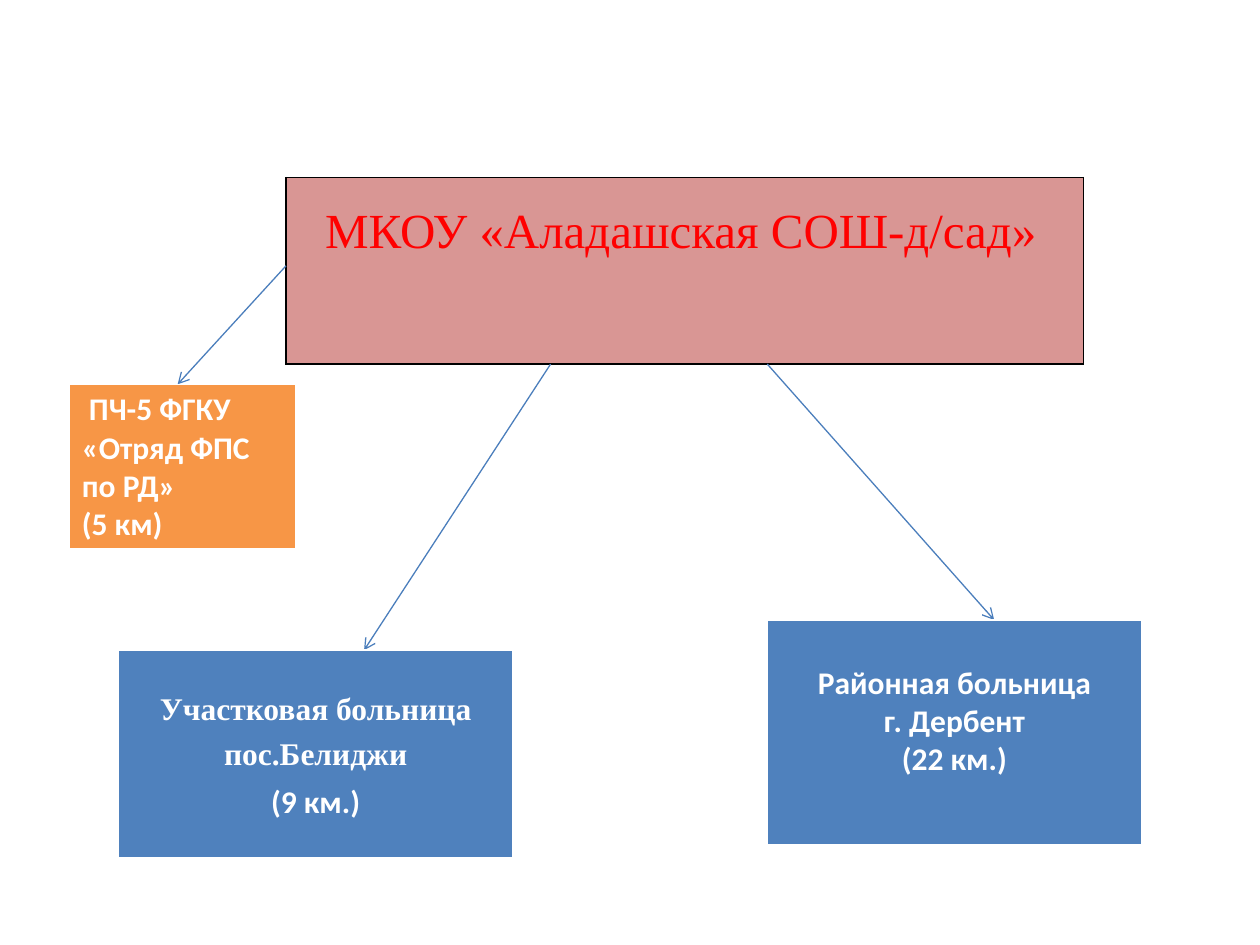
from dataclasses import dataclass

from lxml import etree
from pptx import Presentation
from pptx.dml.color import RGBColor
from pptx.enum.shapes import MSO_CONNECTOR
from pptx.enum.text import PP_ALIGN
from pptx.oxml.ns import qn
from pptx.util import Inches, Pt

STRAIGHT = MSO_CONNECTOR.STRAIGHT
LEFT, CENTER = PP_ALIGN.LEFT, PP_ALIGN.CENTER

BLACK = RGBColor(0x00, 0x00, 0x00)
WHITE = RGBColor(0xFF, 0xFF, 0xFF)
RED = RGBColor(0xFF, 0x00, 0x00)
ROSE = RGBColor(0xD9, 0x96, 0x94)
ORANGE = RGBColor(0xF7, 0x96, 0x46)
BLUE = RGBColor(0x4F, 0x81, 0xBD)
ARROW_BLUE = RGBColor(0x4B, 0x7E, 0xBC)

SANS, SERIF = "Calibri", "Times New Roman"


@dataclass
class Box:
    """One-cell table; lines holds (text, font name) pairs."""
    left: float
    top: float
    width: float
    height: float
    fill: RGBColor
    lines: list[tuple[str, str]]
    margins: tuple[float, float, float, float]  # left, top, right, bottom
    align: PP_ALIGN = CENTER
    size: int = 18
    color: RGBColor = WHITE
    bold: bool = True
    condensed: bool = False
    border: RGBColor = WHITE
    bottom_border: int = 3


@dataclass
class Arrow:
    start: tuple[float, float]
    end: tuple[float, float]


SCHOOL = Box(2.27, 1.41, 6.33, 1.48, ROSE,
             [("МКОУ «Аладашская СОШ-д/сад»", SERIF)],
             (0.31, 0.29, 0.07, 0), align=LEFT, size=28, color=RED,
             bold=False, condensed=True, border=BLACK, bottom_border=1)
FIRE_STATION = Box(0.55, 3.05, 1.8, 1.3, ORANGE,
                   [(" ПЧ-5 ФГКУ «Отряд ФПС по РД»", SANS), ("(5 км)", SANS)],
                   (0.1, 0.05, 0.1, 0.05), align=LEFT)
LOCAL_HOSPITAL = Box(0.94, 5.16, 3.13, 1.66, BLUE,
                     [("Участковая больница", SERIF),
                      ("пос.Белиджи", SERIF), ("(9 км.)", SANS)],
                     (0.12, 0.38, 0.12, 0), condensed=True)
DISTRICT_HOSPITAL = Box(6.09, 4.92, 2.97, 1.8, BLUE,
                        [("Районная больница", SANS),
                         ("г. Дербент", SANS), ("(22 км.)", SANS)],
                        (0.1, 0.35, 0.1, 0.05))

SCHOOL_BOTTOM = SCHOOL.top + SCHOOL.height
ARROWS = [
    Arrow((SCHOOL.left, 2.11), (1.41, FIRE_STATION.top)),
    Arrow((4.37, SCHOOL_BOTTOM), (2.89, LOCAL_HOSPITAL.top)),
    Arrow((6.09, SCHOOL_BOTTOM), (7.89, DISTRICT_HOSPITAL.top)),
]


def set_borders(cell, color: RGBColor, bottom_width: int) -> None:
    properties = cell._tc.get_or_add_tcPr()
    widths = {"a:lnL": 1, "a:lnR": 1, "a:lnT": 1, "a:lnB": bottom_width}
    for position, (tag, width) in enumerate(widths.items()):
        edge = etree.Element(qn(tag), w=str(Pt(width)))
        solid = etree.SubElement(edge, qn("a:solidFill"))
        etree.SubElement(solid, qn("a:srgbClr"), val=str(color))
        properties.insert(position, edge)  # borders come before the fill


def draw_box(slide, box: Box) -> None:
    table = slide.shapes.add_table(
        1, 1, Inches(box.left), Inches(box.top),
        Inches(box.width), Inches(box.height)).table
    table.first_row = table.horz_banding = False
    cell = table.cell(0, 0)
    cell.fill.solid()
    cell.fill.fore_color.rgb = box.fill
    (cell.margin_left, cell.margin_top,
     cell.margin_right, cell.margin_bottom) = map(Inches, box.margins)
    set_borders(cell, box.border, box.bottom_border)

    cell.text_frame.text = "\n".join(text for text, _ in box.lines)
    for paragraph, (_, font_name) in zip(cell.text_frame.paragraphs, box.lines):
        paragraph.alignment = box.align
        if box.condensed:
            paragraph.line_spacing = 0.8
            paragraph.space_after = Pt(10)
        font = paragraph.runs[0].font
        font.name, font.size, font.bold = font_name, Pt(box.size), box.bold
        font.color.rgb = box.color


def draw_arrow(slide, arrow: Arrow) -> None:
    connector = slide.shapes.add_connector(
        STRAIGHT, *map(Inches, arrow.start + arrow.end))
    connector.line.color.rgb = ARROW_BLUE
    connector.line.width = Pt(0.75)
    etree.SubElement(connector.line._get_or_add_ln(), qn("a:tailEnd"), type="arrow")
    etree.SubElement(connector._element.spPr, qn("a:effectLst"))


def main() -> None:
    presentation = Presentation()
    presentation.slide_width, presentation.slide_height = Inches(10), Inches(7.5)
    slide = presentation.slides.add_slide(presentation.slide_layouts[6])

    # School at the top, then each service with the arrow leading to it
    draw_box(slide, SCHOOL)
    services = (FIRE_STATION, LOCAL_HOSPITAL, DISTRICT_HOSPITAL)
    for arrow, service in zip(ARROWS, services):
        draw_arrow(slide, arrow)
        draw_box(slide, service)

    presentation.save("out.pptx")


if __name__ == "__main__":
    main()
